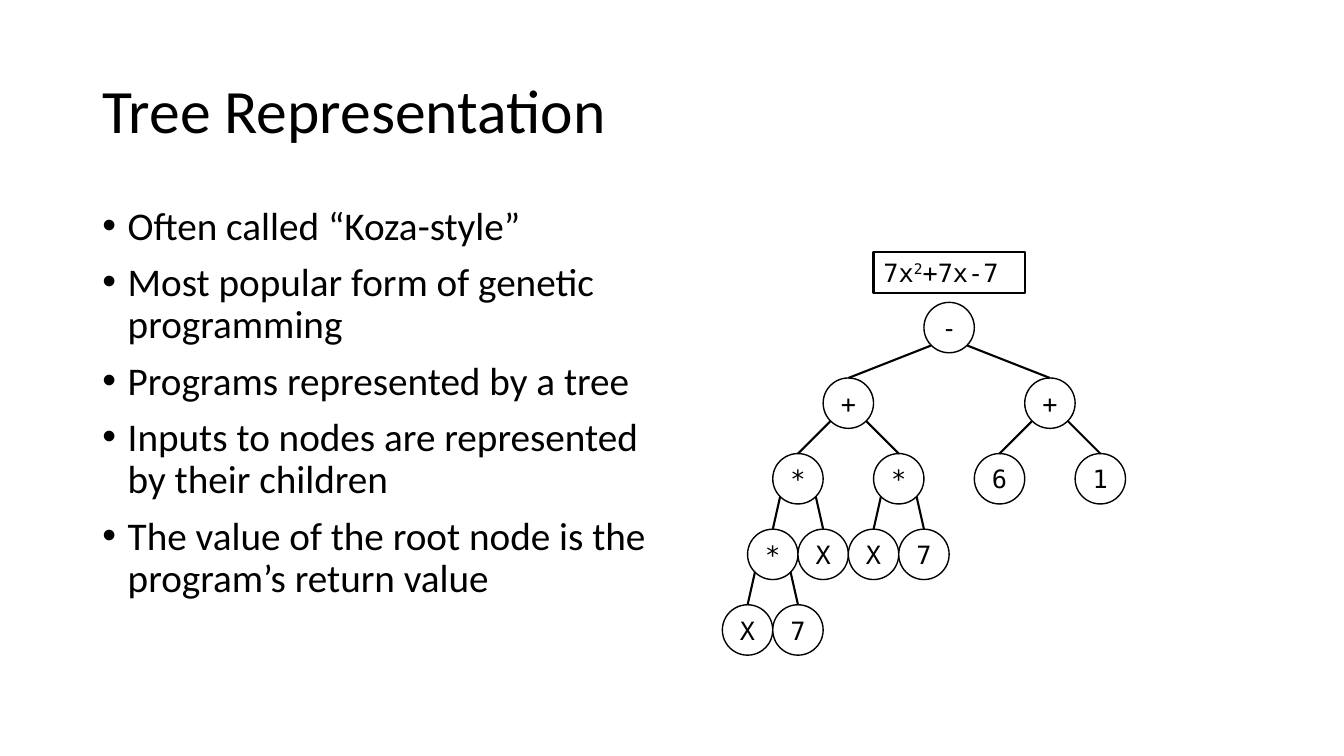
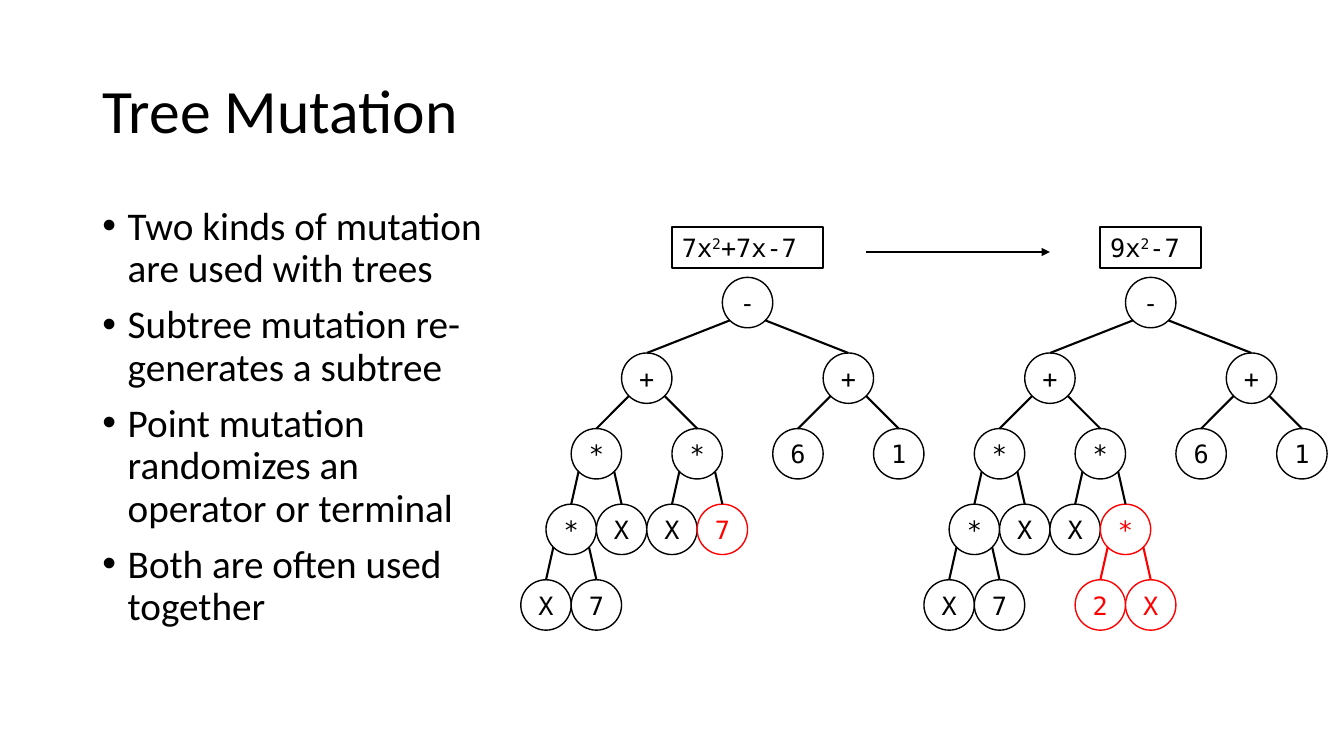
from dataclasses import dataclass
from math import sqrt

from lxml.etree import SubElement
from pptx import Presentation
from pptx.dml.color import RGBColor
from pptx.enum.shapes import MSO_CONNECTOR as Link, MSO_SHAPE as Preset
from pptx.enum.text import MSO_ANCHOR as Anchor, MSO_AUTO_SIZE as Fit, PP_ALIGN as Align
from pptx.oxml.ns import qn
from pptx.util import Cm, Pt

BLACK, WHITE, RED = "000000", "FFFFFF", "FF0000"
TEXT_FONT, CODE_FONT = "Calibri", "DejaVu Sans Mono"

# Tree geometry
DIAMETER = Cm(1.27)
LEVEL_STEP = int(DIAMETER * 1.5)
SPREADS = (2 * DIAMETER, DIAMETER, DIAMETER // 2, DIAMETER // 2)
DIAGONAL = int(DIAMETER / 2 * sqrt(0.5))
EQUATION_HEIGHT = Cm(1.03)


@dataclass
class Node:
    symbol: str
    children: tuple = ()
    colour: str = BLACK


def rgb(value):
    return RGBColor.from_string(value)


def set_font(paragraph, name, size, colour=BLACK):
    font = paragraph.font
    font.name, font.size = name, Pt(size)
    font.color.rgb = rgb(colour)


def set_line(line, colour, width):
    line.color.rgb = rgb(colour)
    line.width = Pt(width)


# Slide frame: title and bullets
def add_titled_slide(deck, heading):
    slide = deck.slides.add_slide(deck.slide_layouts[5])
    title = slide.shapes.title
    title.left, title.top, title.width, title.height = Cm(2.33), Cm(1.01), Cm(29.21), Cm(3.68)
    frame = title.text_frame
    frame.text = heading
    frame.vertical_anchor, frame.auto_size = Anchor.MIDDLE, Fit.NONE
    paragraph = frame.paragraphs[0]
    paragraph.alignment, paragraph.line_spacing = Align.LEFT, 0.9
    set_font(paragraph, TEXT_FONT, 44)
    return slide


def add_bullets(slide, left, top, width, height, points):
    frame = slide.shapes.add_textbox(left, top, width, height).text_frame
    frame.word_wrap = True
    frame.text = "\n".join(points)
    for paragraph in frame.paragraphs:
        paragraph.line_spacing, paragraph.space_before = 0.9, Pt(10)
        properties = paragraph._p.get_or_add_pPr()
        properties.set("marL", str(Cm(0.64)))
        properties.set("indent", str(-Cm(0.64)))
        SubElement(properties, qn("a:buFont"), typeface="Arial")
        SubElement(properties, qn("a:buChar"), char="•")
        set_font(paragraph, TEXT_FONT, 28)


# Lines and tree parts
def add_line(slide, start_x, start_y, end_x, end_y, colour=BLACK, arrow=False):
    line = slide.shapes.add_connector(Link.STRAIGHT, start_x, start_y, end_x, end_y)
    set_line(line.line, colour, 1.5)
    if arrow:
        SubElement(line.get_or_add_ln(), qn("a:tailEnd"), type="triangle")
    SubElement(line._element.spPr, qn("a:effectLst"))
    return line


def add_circle(slide, center_x, top, node):
    circle = slide.shapes.add_shape(
        Preset.OVAL, center_x - DIAMETER // 2, top, DIAMETER, DIAMETER)
    circle.shadow.inherit = False
    circle.fill.solid()
    circle.fill.fore_color.rgb = rgb(WHITE)
    set_line(circle.line, node.colour, 1)
    frame = circle.text_frame
    frame.margin_left = frame.margin_right = frame.margin_top = frame.margin_bottom = 0
    frame.vertical_anchor, frame.word_wrap = Anchor.MIDDLE, False
    frame.text = node.symbol
    frame.paragraphs[0].alignment = Align.CENTER
    set_font(frame.paragraphs[0], CODE_FONT, 18, node.colour)
    return circle


def add_tree(slide, center_x, top, node, depth=0):
    circle = add_circle(slide, center_x, top, node)
    for side, child in zip((-1, 1), node.children):
        child_x, child_top = center_x + side * SPREADS[depth], top + LEVEL_STEP
        child_circle = add_tree(slide, child_x, child_top, child, depth + 1)
        edge = add_line(slide, center_x + side * DIAGONAL, top + DIAMETER // 2 + DIAGONAL,
                        child_x, child_top, node.colour)
        edge.end_connect(child_circle, 0)
    return circle


def add_equation(slide, center_x, top, width, base, power, rest):
    box = slide.shapes.add_textbox(center_x - width // 2, top, width, EQUATION_HEIGHT)
    set_line(box.line, BLACK, 1.5)
    frame = box.text_frame
    frame.word_wrap, frame.auto_size = True, Fit.SHAPE_TO_FIT_TEXT
    paragraph = frame.paragraphs[0]
    set_font(paragraph, CODE_FONT, 18)
    for text in (base, power, rest):
        run = paragraph.add_run()
        run.text = text
        if text == power:
            run._r.get_or_add_rPr().set("baseline", "30000")


def add_program(slide, center_x, top, width, equation, root):
    """Equation with its expression tree below, centred on center_x."""
    add_equation(slide, center_x, top, width, *equation)
    add_tree(slide, center_x, top + DIAMETER, root)


def program_tree(last_factor):
    """The example program, whose second product ends in last_factor."""
    x, seven = Node("X"), Node("7")
    square = Node("*", (Node("*", (x, seven)), x))
    product = Node("*", (x, last_factor))
    constant = Node("+", (Node("6"), Node("1")))
    return Node("-", (Node("+", (square, product)), constant))


# Slides
ORIGINAL_EQUATION = ("7x", "2", "+7x-7")
MUTATED_EQUATION = ("9x", "2", "-7")


def representation_slide(deck):
    slide = add_titled_slide(deck, "Tree Representation")
    add_bullets(slide, Cm(2.33), Cm(5.07), Cm(14.4), Cm(12.08), (
        "Often called “Koza-style”",
        "Most popular form of genetic programming",
        "Programs represented by a tree",
        "Inputs to nodes are represented by their children",
        "The value of the root node is the program’s return value",
    ))
    add_program(slide, Cm(23.92), Cm(6.35), Cm(3.81), ORIGINAL_EQUATION,
                program_tree(Node("7")))


def mutation_slide(deck):
    slide = add_titled_slide(deck, "Tree Mutation")
    add_bullets(slide, Cm(2.33), Cm(5.07), Cm(10.34), Cm(12.08), (
        "Two kinds of mutation are used with trees",
        "Subtree mutation re-generates a subtree",
        "Point mutation randomizes an operator or terminal",
        "Both are often used together",
    ))
    new_subtree = Node("*", (Node("2", colour=RED), Node("X", colour=RED)), RED)
    add_program(slide, Cm(18.84), Cm(5.72), Cm(3.81), ORIGINAL_EQUATION,
                program_tree(Node("7", colour=RED)))
    add_program(slide, Cm(29), Cm(5.72), Cm(2.54), MUTATED_EQUATION,
                program_tree(new_subtree))
    add_line(slide, Cm(21.83), Cm(6.35), Cm(26.46), Cm(6.35), arrow=True)


def main():
    deck = Presentation()
    deck.slide_width, deck.slide_height = Cm(33.87), Cm(19.05)
    representation_slide(deck)
    mutation_slide(deck)
    deck.save("out.pptx")


if __name__ == "__main__":
    main()
